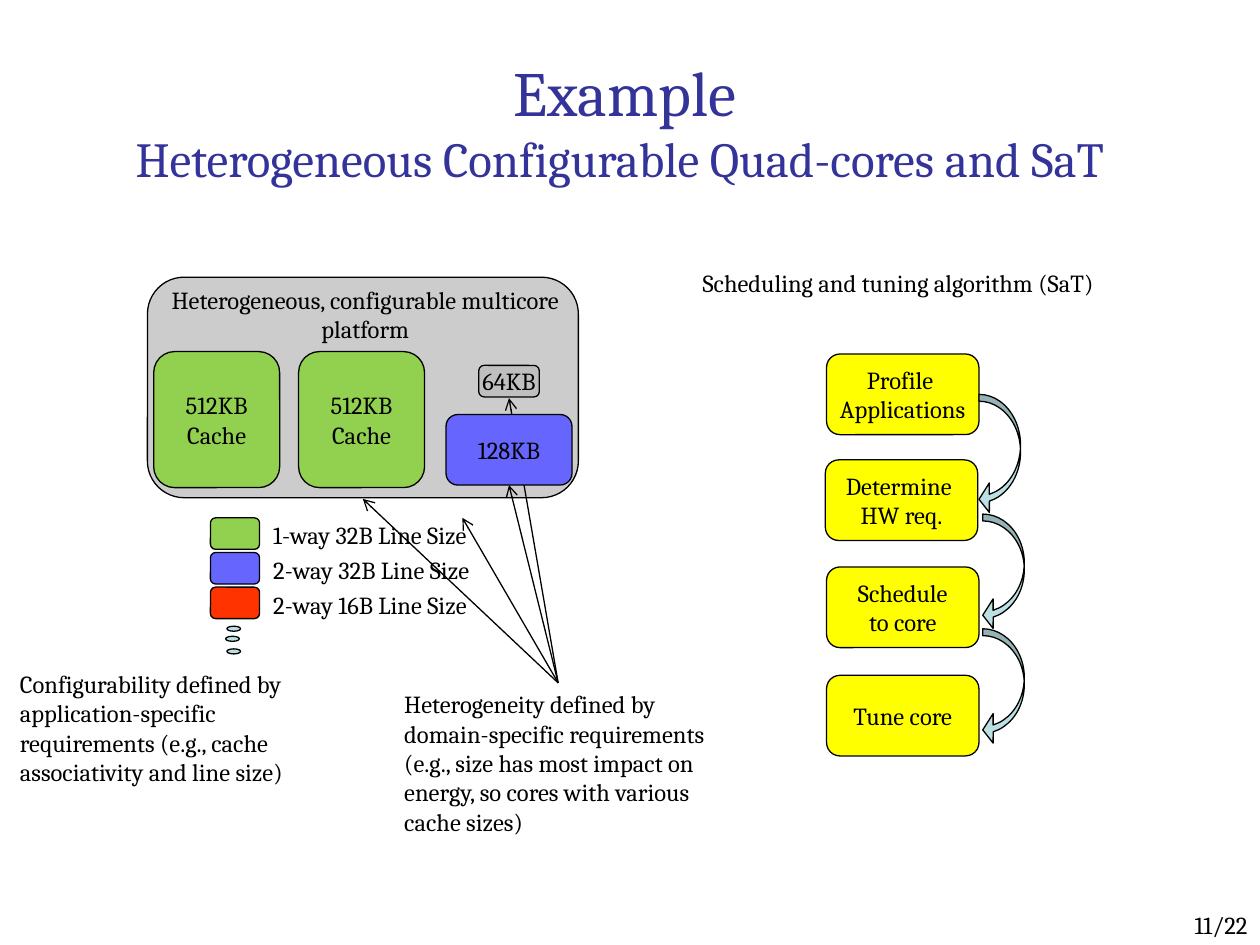
import pptx
import pptx.dml.color
import pptx.enum.shapes
import pptx.enum.text
import pptx.oxml
import pptx.oxml.ns
import pptx.util
from pptx.util import Inches

SHAPE = pptx.enum.shapes.MSO_SHAPE
ALIGN = pptx.enum.text.PP_ALIGN
ANCHOR = pptx.enum.text.MSO_ANCHOR
COLORS = {
    "title": "333399", "black": "000000", "platform": "CCCCCC",
    "green": "92D050", "blue": "6666FF", "gray": "BFBFBF",
    "red": "FF3300", "yellow": "FFFF00", "pale": "BBE0E3",
}


def rgb(name):
    return pptx.dml.color.RGBColor.from_string(COLORS[name])


class Diagram:
    font, size, line_width = "Cambria", 14, 0.75

    def __init__(self, slide):
        self.s = slide

    def run(self, p, text, size=None, color="black"):
        r = p.add_run()
        r.text = text
        r.font.name = self.font
        r.font.size = pptx.util.Pt(size or self.size)
        r.font.color.rgb = rgb(color)

    def paragraphs(self, tf, lines, align):
        for i, line in enumerate(lines):
            p = tf.add_paragraph() if i else tf.paragraphs[0]
            p.alignment = align
            self.run(p, line)

    def text(self, box, *lines, align=ALIGN.LEFT, anchor=ANCHOR.TOP):
        tf = self.s.shapes.add_textbox(*map(Inches, box)).text_frame
        tf.word_wrap = True
        tf.vertical_anchor = anchor
        self.paragraphs(tf, lines, align)
        return tf

    def title(self, box, heading, subtitle):
        tf = self.text(box, align=ALIGN.CENTER, anchor=ANCHOR.MIDDLE)
        p = tf.paragraphs[0]
        p.alignment = ALIGN.CENTER
        self.run(p, heading, 36, "title")
        p.add_line_break()
        self.run(p, subtitle, 28, "title")

    def shape(self, box, fill, *lines, kind=SHAPE.ROUNDED_RECTANGLE, adjust=()):
        sp = self.s.shapes.add_shape(kind, *map(Inches, box))
        sp.shadow.inherit = False
        sp.fill.solid()
        sp.fill.fore_color.rgb = rgb(fill)
        sp.line.color.rgb = rgb("black")
        sp.line.width = pptx.util.Pt(self.line_width)
        for i, value in enumerate(adjust):
            sp.adjustments[i] = value
        if lines:
            tf = sp.text_frame
            tf.word_wrap = False
            tf.vertical_anchor = ANCHOR.MIDDLE
            self.paragraphs(tf, lines, ALIGN.CENTER)

    def arrow(self, start, end):
        line = self.s.shapes.add_connector(
            pptx.enum.shapes.MSO_CONNECTOR.STRAIGHT, *map(Inches, start + end))
        line.line.color.rgb = rgb("black")
        line.line.width = pptx.util.Pt(self.line_width)
        ns = pptx.oxml.ns.nsdecls("a")
        line.line._get_or_add_ln().append(
            pptx.oxml.parse_xml(f'<a:tailEnd {ns} type="arrow"/>'))
        line._element.spPr.append(pptx.oxml.parse_xml(f"<a:effectLst {ns}/>"))


def main():
    prs = pptx.Presentation()
    prs.slide_width, prs.slide_height = Inches(10), Inches(7.5)
    d = Diagram(prs.slides.add_slide(prs.slide_layouts[6]))

    d.title((0.17, 0.33, 9.58, 1.25), "Example",
            "Heterogeneous Configurable Quad-cores and SaT ")

    # Multicore platform and its explanations
    d.shape((1.17, 2.2, 3.42, 1.75), "platform")
    d.text((1.2, 2.21, 3.4, 0.57),
           "Heterogeneous, configurable multicore platform", align=ALIGN.CENTER)
    d.text((3.11, 5.42, 2.65, 1.28),
           "Heterogeneity defined by domain-specific requirements (e.g., size has "
           "most impact on energy, so cores with various cache sizes)")
    for target in ((3.67, 4.11), (2.88, 3.96), (4.04, 3.85), (4.04, 3.16)):
        d.arrow((4.43, 5.42), target)
    d.text((0.06, 5.26, 2.73, 1.04),
           "Configurability defined by application-specific requirements "
           "(e.g., cache associativity and line size)")

    # Caches of the cores
    for x in (1.22, 2.37):
        d.shape((x, 2.79, 1, 1.08), "green", "512KB", "Cache")
    d.shape((3.54, 3.29, 1, 0.56), "blue", "128KB")
    d.shape((3.8, 2.9, 0.48, 0.25), "gray", "64KB")

    # Scheduling and tuning steps
    d.text((5.43, 2.08, 3.4, 0.34), "Scheduling and tuning algorithm (SaT)",
           align=ALIGN.CENTER)
    steps = ((6.56, 2.81, ("Profile ", "Applications")),
             (6.55, 3.65, ("Determine ", "HW req.")),
             (6.56, 4.5, ("Schedule", "to core")),
             (6.56, 5.36, ("Tune core",)))
    for x, y, lines in steps:
        d.shape((x, y, 1.21, 0.64), "yellow", *lines)
    for x, y, height in ((7.77, 3.13, 0.95), (7.8, 4.08, 0.92), (7.8, 4.99, 0.92)):
        d.shape((x, y, 0.33, height), "pale", kind=SHAPE.CURVED_LEFT_ARROW,
                adjust=(0.165, 0.71, 0.25))

    # Legend of cache configurations, continued by dots
    legend = (("green", "1-way 32B Line Size"), ("blue", "2-way 32B Line Size"),
              ("red", "2-way 16B Line Size"))
    for i, (color, label) in enumerate(legend):
        y = 4.11 + 0.275 * i
        d.shape((1.67, y, 0.39, 0.25), color)
        d.text((2.07, y - 0.03, 2.09, 0.3), label)
    for x, y in ((1.8, 4.97), (1.79, 5.05), (1.8, 5.15)):
        d.shape((x, y, 0.11, 0.04), "pale", kind=SHAPE.OVAL)

    # Page number
    d.text((7.92, 7.17, 2.08, 0.3), "11/22", align=ALIGN.RIGHT)

    prs.save("out.pptx")


if __name__ == "__main__":
    main()
